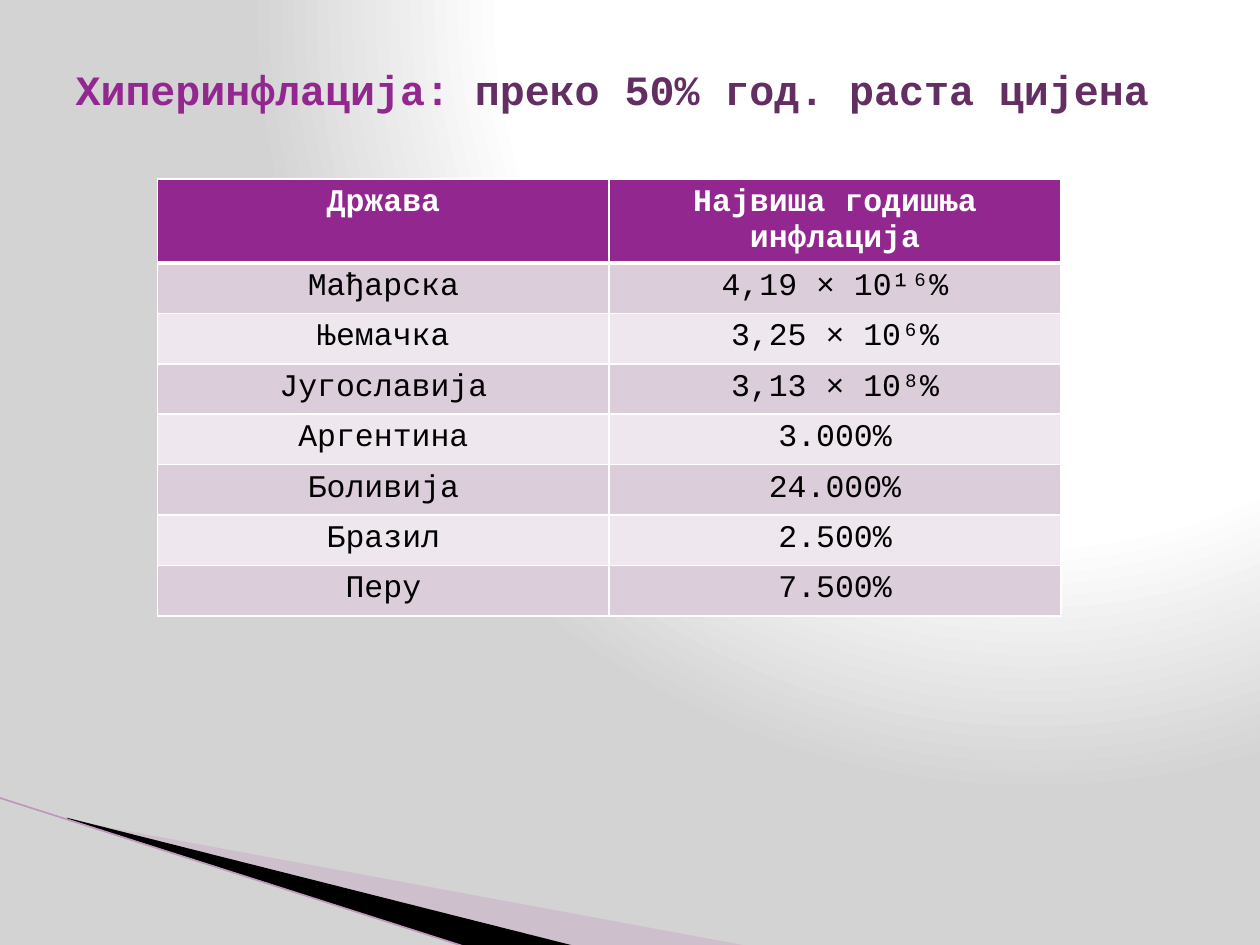
from lxml import etree
from pptx import Presentation, oxml, util as u
from pptx.dml.color import RGBColor
from pptx.enum import text
from pptx.oxml.ns import nsdecls, qn

WIDTH, HEIGHT = u.Inches(10), u.Inches(7.5)
FONT = "Courier New"
COLORS = {
    "purple": "92278F", "plum": "632E62", "white": "FFFFFF", "black": "000000",
    "grey": "D3D3D3", "band_dark": "DCCDDB", "band_light": "EEE8EE",
    "mauve": "C4A1C2", "edge": "BD97BC",
}
TITLE = [("Хиперинфлација: ", "purple"), ("преко 50% год. раста цијена", "plum")]
HEADER = ("Држава", "Највиша годишња инфлација")
RATES = [
    ("Мађарска", "4,19 × 10¹⁶%"),
    ("Њемачка", "3,25 × 10⁶%"),
    ("Југославија", "3,13 × 10⁸%"),
    ("Аргентина", "3.000%"),
    ("Боливија", "24.000%"),
    ("Бразил", "2.500%"),
    ("Перу", "7.500%"),
]


def rgb(name):
    return RGBColor.from_string(COLORS[name])


def style_run(run, color, **formats):
    for key, value in {"name": FONT, **formats}.items():
        setattr(run.font, key, value)
    run.font.color.rgb = rgb(color)


def set_background(slide):
    """Radial gradient, white at the upper right and grey at the edges."""
    stops = "".join(
        f'<a:gs pos="{share * 1000}"><a:srgbClr val="{COLORS[name]}"/></a:gs>'
        for share, name in ((0, "white"), (67, "white"), (100, "grey")))
    background = oxml.parse_xml(
        f'<p:bg {nsdecls("p", "a")}><p:bgPr><a:gradFill rotWithShape="1">'
        f'<a:gsLst>{stops}</a:gsLst><a:path path="circle">'
        '<a:fillToRect l="65000" t="0" r="0" b="98000"/></a:path></a:gradFill>'
        '<a:effectLst/></p:bgPr></p:bg>')
    slide.element.cSld.insert(0, background)


def add_wedge(slide, points, color, opacity=100):
    corners = [(u.Inches(x), u.Inches(y)) for x, y in points]
    builder = slide.shapes.build_freeform(*corners[0])
    builder.add_line_segments(corners[1:], close=True)
    wedge = builder.convert_to_shape()
    wedge.shadow.inherit = False
    wedge.fill.solid()
    wedge.fill.fore_color.rgb = rgb(color)
    wedge.line.fill.background()
    if opacity < 100:
        tint = wedge.element.spPr.find(".//" + qn("a:srgbClr"))
        etree.SubElement(tint, qn("a:alpha"), val=str(opacity * 1000))


def add_edge(slide, start, end):
    ends = [u.Inches(value) for value in (*start, *end)]
    edge = slide.shapes.add_connector(1, *ends)
    edge.line.color.rgb = rgb("edge")
    edge.line.width = u.Pt(0.95)
    etree.SubElement(edge.element.spPr, qn("a:effectLst"))


def add_title(slide):
    title = slide.shapes.title
    title.left, title.top = int(WIDTH * 0.05), u.Inches(0.5)
    title.width, title.height = int(WIDTH * 0.9), u.Inches(0.78)
    frame = title.text_frame
    formats = {"word_wrap": True, "auto_size": text.MSO_AUTO_SIZE.NONE,
               "vertical_anchor": text.MSO_ANCHOR.TOP,
               "margin_top": u.Inches(0.15)}
    for key, value in formats.items():
        setattr(frame, key, value)
    heading = frame.paragraphs[0]
    heading.alignment = text.PP_ALIGN.LEFT
    heading.line_spacing = 0.6
    for words, color in TITLE:
        run = heading.add_run()
        run.text = words
        style_run(run, color, size=u.Pt(23.8), bold=True)


def set_borders(cell, bottom):
    for side in "LRTB":
        width = u.Pt(bottom if side == "B" else 1)
        cell._tc.get_or_add_tcPr().append(oxml.parse_xml(
            f'<a:ln{side} {nsdecls("a")} w="{width}"><a:solidFill>'
            f'<a:srgbClr val="{COLORS["white"]}"/></a:solidFill></a:ln{side}>'))


def fill_cell(cell, words, fill, color, bold, bottom):
    set_borders(cell, bottom)
    cell.fill.solid()
    cell.fill.fore_color.rgb = rgb(fill)
    paragraph = cell.text_frame.paragraphs[0]
    paragraph.alignment = text.PP_ALIGN.CENTER
    run = paragraph.add_run()
    run.text = words
    style_run(run, color, size=u.Pt(18), bold=bold)


def add_rates_table(slide):
    rows = [HEADER, *RATES]
    row_height = u.Inches(0.4)
    table = slide.shapes.add_table(
        len(rows), len(HEADER), u.Inches(1.25), u.Inches(1.42),
        u.Inches(7.17), row_height * len(rows)).table
    for index, row in enumerate(rows):
        table.rows[index].height = row_height
        if index == 0:
            look = ("purple", "white", True, 3)
        else:
            look = ("band_dark" if index % 2 else "band_light", "black", False, 1)
        for column, words in enumerate(row):
            fill_cell(table.cell(index, column), words, *look)


def main():
    deck = Presentation()
    deck.slide_width, deck.slide_height = WIDTH, HEIGHT
    slide = deck.slides.add_slide(deck.slide_layouts[5])
    set_background(slide)
    add_wedge(slide, [(0.55, 6.51), (5.95, 7.51), (4.56, 7.51), (0.55, 6.5)],
              "mauve", opacity=40)
    add_wedge(slide, [(0.53, 6.49), (4.57, 7.51), (3.72, 7.52), (0.54, 6.5)],
              "black")
    add_edge(slide, (-0.01, 6.33), (3.71, 7.52))
    add_rates_table(slide)
    add_title(slide)
    deck.save("out.pptx")


if __name__ == "__main__":
    main()
